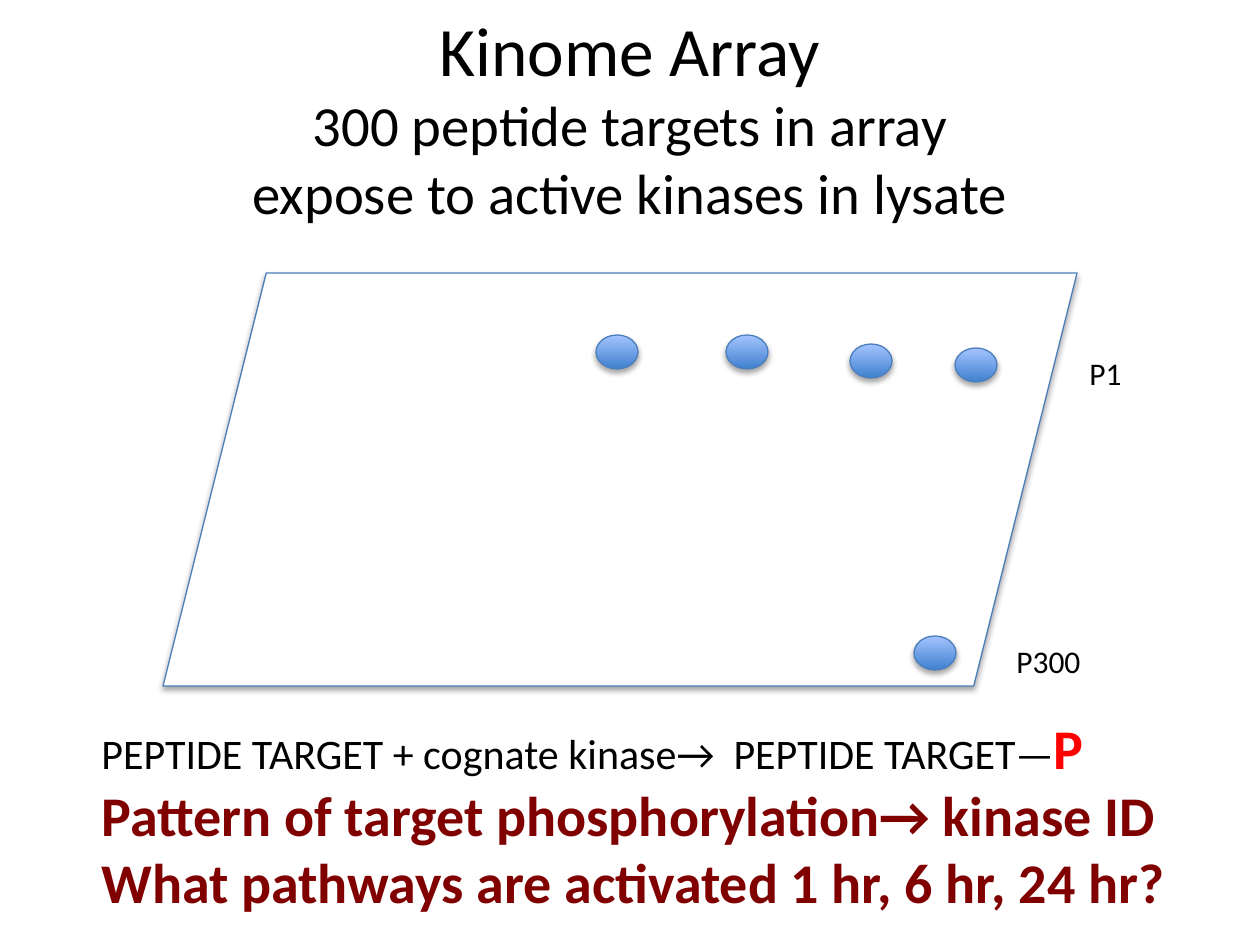
import lxml.etree
import pptx
import pptx.dml.color
import pptx.enum.shapes
import pptx.enum.text
import pptx.oxml.ns
import pptx.util

EMU_PER_PX = 914400 / 126
FONT = "Calibri"
COLORS = {
    "text": "000000",
    "plate": "FFFFFF",
    "outline": "4B7EBC",
    "spot_bottom": "3F80CE",
    "spot_top": "A4C4FF",
    "phosphate": "FF0000",
    "question": "800000",
    "shadow": "000000",
}
SPOT_WIDTH, SPOT_HEIGHT = 42, 34
SPOTS = [(433, 62), (563, 62), (687, 71), (792, 75), (751, 363)]
LABELS = [("P1", 914, 75, 58), ("P300", 841, 363, 91)]


def px(length):
    return round(length * EMU_PER_PX)


def rgb(name):
    return pptx.dml.color.RGBColor.from_string(COLORS[name])


def add_text(paragraph, text, size=18, color="text", bold=False):
    for index, line in enumerate(text.split("\n")):
        if index:
            paragraph.add_line_break()
        run = paragraph.add_run()
        run.text = line
        run.font.name = FONT
        run.font.size = pptx.util.Pt(size)
        run.font.color.rgb = rgb(color)
        run.font.bold = bold


def add_frame(slide, left, top, width, height, wrap=False):
    frame = slide.shapes.add_textbox(px(left), px(top), px(width), px(height)).text_frame
    frame.word_wrap = wrap
    return frame


def add_raised_shape(slide, kind, left, top, width, height):
    shape = slide.shapes.add_shape(kind, px(left), px(top), px(width), px(height))
    shape.line.color.rgb = rgb("outline")
    shape.line.width = pptx.util.Pt(0.75)
    shape.shadow.inherit = False
    qn = pptx.oxml.ns.qn
    effects = shape.element.spPr.find(qn("a:effectLst"))
    shadow = lxml.etree.SubElement(
        effects, qn("a:outerShdw"),
        blurRad=str(pptx.util.Pt(3.1)), dist=str(pptx.util.Pt(1.8)),
        dir="5400000", rotWithShape="0",
    )
    tint = lxml.etree.SubElement(shadow, qn("a:srgbClr"), val=COLORS["shadow"])
    lxml.etree.SubElement(tint, qn("a:alpha"), val="35000")
    return shape


def add_heading(slide, left, top, width, height):
    frame = add_frame(slide, left, top, width, height, wrap=True)
    frame.vertical_anchor = pptx.enum.text.MSO_ANCHOR.MIDDLE
    heading = frame.paragraphs[0]
    heading.alignment = pptx.enum.text.PP_ALIGN.CENTER
    add_text(heading, "Kinome Array\n", size=39.6)
    add_text(heading, "300 peptide targets in array\nexpose to active kinases in lysate", size=32.4)


def add_array(slide, left, top, width, height):
    kinds = pptx.enum.shapes.MSO_SHAPE
    plate = add_raised_shape(slide, kinds.PARALLELOGRAM, left, top, width, height)
    plate.fill.solid()
    plate.fill.fore_color.rgb = rgb("plate")
    for x, y in SPOTS:
        spot = add_raised_shape(slide, kinds.OVAL, left + x, top + y, SPOT_WIDTH, SPOT_HEIGHT)
        spot.fill.gradient()
        spot.fill.gradient_angle = 90
        for stop, position, color in zip(spot.fill.gradient_stops, (0, 1), ("spot_bottom", "spot_top")):
            stop.position = position
            stop.color.rgb = rgb(color)
    for label, x, y, label_width in LABELS:
        frame = add_frame(slide, left + x, top + y, label_width, 50)
        add_text(frame.paragraphs[0], label)


def add_conclusion(slide, left, top, width, height):
    frame = add_frame(slide, left, top, width, height)
    reaction = frame.paragraphs[0]
    add_text(reaction, "PEPTIDE TARGET + cognate kinase→  PEPTIDE TARGET—", size=24)
    add_text(reaction, "P", size=32, color="phosphate", bold=True)
    for question in (
        "Pattern of target phosphorylation→ kinase ID",
        "What pathways are activated 1 hr, 6 hr, 24 hr?",
    ):
        add_text(frame.add_paragraph(), question, size=32, color="question", bold=True)


def main():
    deck = pptx.Presentation()
    deck.slide_width, deck.slide_height = px(1260), px(945)
    slide = deck.slides.add_slide(deck.slide_layouts[6])
    add_heading(slide, 63, 38, 1134, 157)
    add_array(slide, 163, 273, 914, 413)
    add_conclusion(slide, 89, 707, 1113, 217)
    deck.save("out.pptx")


if __name__ == "__main__":
    main()
